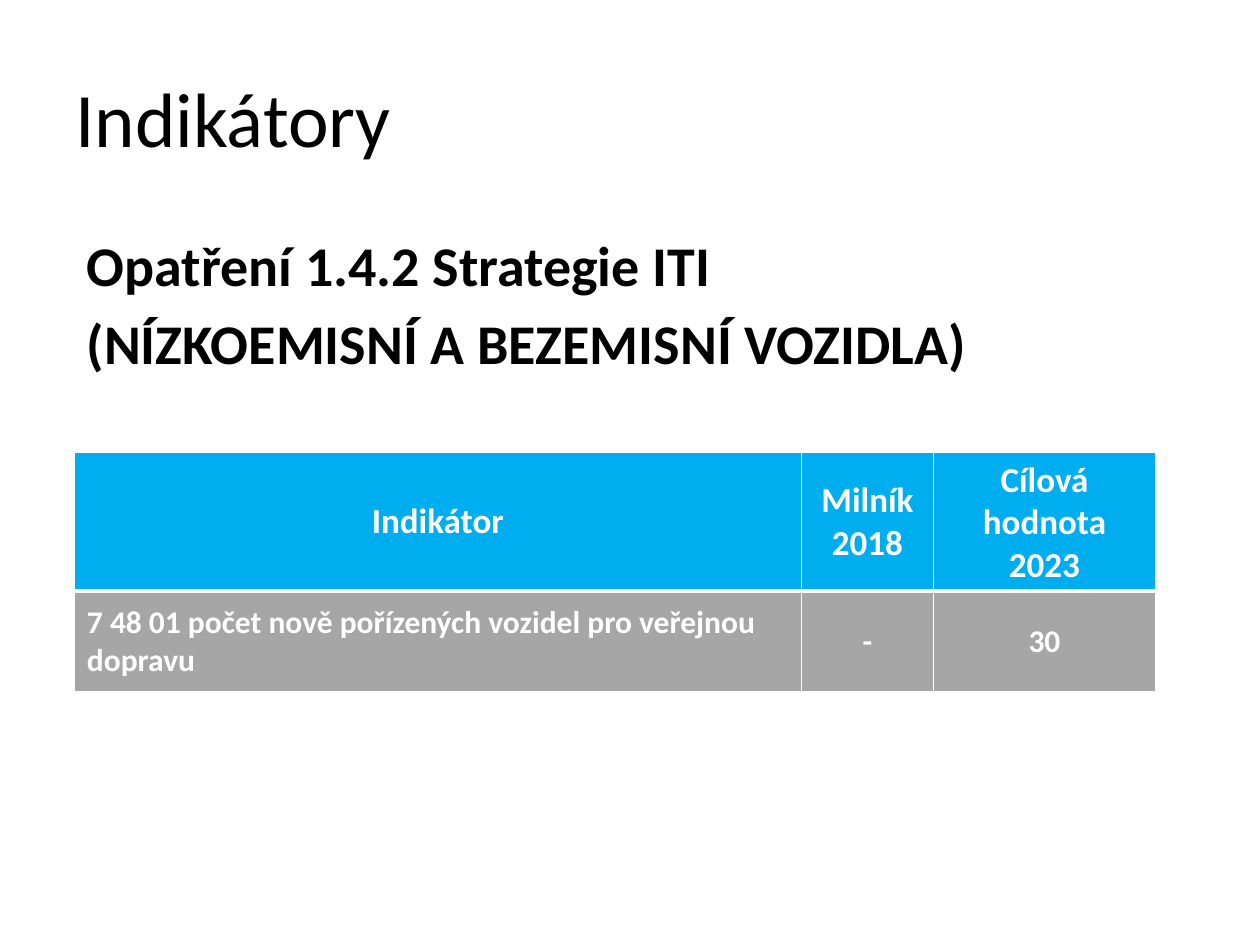
"""Build the indicator slide with a heading, a measure and a table of targets."""
from lxml.etree import SubElement
from pptx import Presentation
from pptx.dml.color import RGBColor
from pptx.enum.text import MSO_ANCHOR as Anchor, PP_ALIGN as Align
from pptx.oxml.ns import qn
from pptx.util import Inches, Pt

TITLE = "Indikátory"
MEASURE = ["Opatření 1.4.2 Strategie ITI", "(NÍZKOEMISNÍ A BEZEMISNÍ VOZIDLA)"]
ROWS = [
    ["Indikátor", "Milník 2018", "Cílová hodnota 2023"],
    ["7 48 01 počet nově pořízených vozidel pro veřejnou dopravu", "-", "30"],
]
COLUMN_WIDTHS = [5.77, 1.05, 1.76]
ROW_STYLES = [
    {"height": 1.1, "fill": "00AEEF", "size": 20, "top": 1, "bottom": 3},
    {"height": 0.8, "fill": "A6A6A6", "size": 18, "top": 3, "bottom": 1},
]


def color(value):
    return RGBColor.from_string(value)


def style_font(font, size, value, bold):
    font.name = "Calibri"
    font.size = Pt(size)
    font.bold = bold
    font.color.rgb = color(value)


def add_text(slide, box, lines, size, bold, anchor):
    frame = slide.shapes.add_textbox(*map(Inches, box)).text_frame
    frame.word_wrap = True
    frame.vertical_anchor = anchor
    frame.text = "\n".join(lines)
    for index, paragraph in enumerate(frame.paragraphs):
        if index:
            paragraph.space_before = Pt(size * 0.2)
        for run in paragraph.runs:
            style_font(run.font, size, "000000", bold)


def add_borders(cell, widths):
    properties = cell._tc.get_or_add_tcPr()
    for side, width in widths.items():
        line = SubElement(properties, qn(f"a:ln{side}"), w=str(Pt(width)))
        fill = SubElement(line, qn("a:solidFill"))
        SubElement(fill, qn("a:srgbClr"), val="FFFFFF")


def add_indicator_table(slide):
    height = sum(style["height"] for style in ROW_STYLES)
    box = (0.59, 3.59, sum(COLUMN_WIDTHS), height)
    table = slide.shapes.add_table(len(ROWS), len(COLUMN_WIDTHS), *map(Inches, box)).table
    for column, width in zip(table.columns, COLUMN_WIDTHS):
        column.width = Inches(width)
    for row, texts, style in zip(table.rows, ROWS, ROW_STYLES):
        row.height = Inches(style["height"])
        for cell, text in zip(row.cells, texts):
            add_borders(cell, {"L": 1, "R": 1, "T": style["top"], "B": style["bottom"]})
            cell.fill.solid()
            cell.fill.fore_color.rgb = color(style["fill"])
            cell.vertical_anchor = Anchor.MIDDLE
            cell.text = text
            paragraph = cell.text_frame.paragraphs[0]
            paragraph.alignment = Align.LEFT if text == ROWS[1][0] else Align.CENTER
            style_font(paragraph.runs[0].font, style["size"], "FFFFFF", True)


def main():
    presentation = Presentation()
    presentation.slide_width, presentation.slide_height = Inches(10), Inches(7.5)
    slide = presentation.slides.add_slide(presentation.slide_layouts[6])
    add_text(slide, (0.5, 0.3, 9, 1.25), [TITLE], 44, False, Anchor.MIDDLE)
    add_text(slide, (0.59, 1.78, 9, 4.95), MEASURE, 32, True, Anchor.TOP)
    add_indicator_table(slide)
    presentation.save("out.pptx")


if __name__ == "__main__":
    main()
